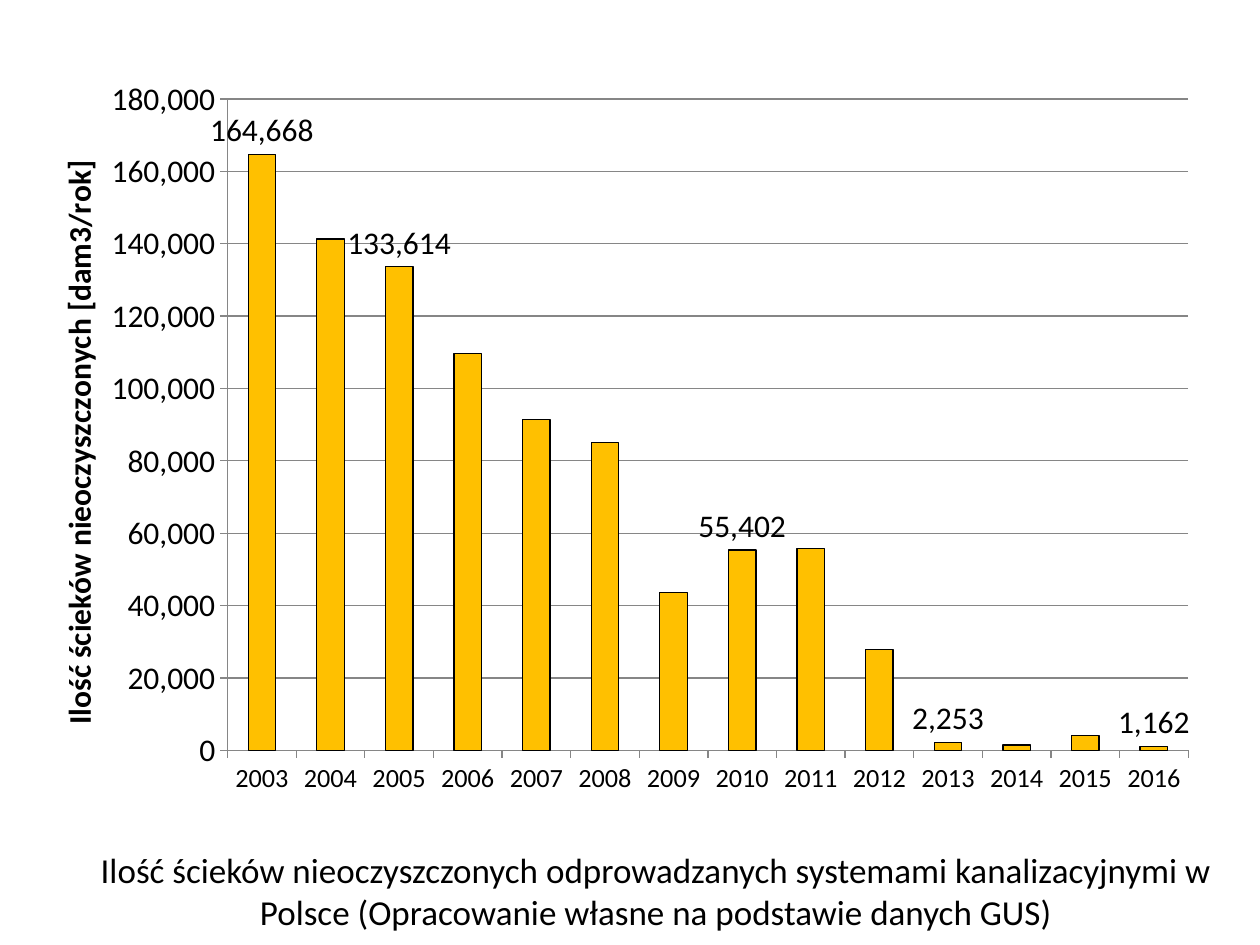
from dataclasses import dataclass

from lxml import etree
from pptx import Presentation
from pptx.chart.data import CategoryChartData
from pptx.dml.color import RGBColor
from pptx.enum.chart import XL_CHART_TYPE, XL_LABEL_POSITION, XL_TICK_MARK
from pptx.enum.text import MSO_ANCHOR, PP_ALIGN
from pptx.oxml.ns import qn
from pptx.util import Pt

COLUMN = XL_CHART_TYPE.COLUMN_CLUSTERED
ABOVE = XL_LABEL_POSITION.OUTSIDE_END
TICK_OUT = XL_TICK_MARK.OUTSIDE
CENTER = PP_ALIGN.CENTER
MIDDLE = MSO_ANCHOR.MIDDLE


@dataclass(frozen=True)
class Theme:
    font: str = "Calibri"
    text: RGBColor = RGBColor(0, 0, 0)
    bar: RGBColor = RGBColor(0xFF, 0xC0, 0x00)
    grid: RGBColor = RGBColor(0x86, 0x86, 0x86)
    caption_size: int = 20
    chart_size: int = 18
    year_size: int = 15


THEME = Theme()
FIRST_YEAR = 2003
VOLUMES = (164668.4, 141326.5, 133614.1, 109675.5, 91408.6, 85008.5, 43644.6,
           55402.3, 55749.3, 27978.8, 2253.3, 1515, 4121.6, 1161.8)
LABELLED_YEARS = (2003, 2005, 2010, 2013, 2016)
AXIS_TITLE = "Ilość ścieków nieoczyszczonych [dam3/rok]"
CAPTION = ("Ilość ścieków nieoczyszczonych odprowadzanych systemami "
           "kanalizacyjnymi w Polsce (Opracowanie własne na podstawie danych GUS)")


def style_font(font, size, bold=False):
    font.name = THEME.font
    font.size = Pt(size)
    font.bold = bold
    font.color.rgb = THEME.text


def style_line(line, color):
    line.color.rgb = color
    line.width = Pt(0.75)


def set_layout(parent, index, **values):
    layout = parent.find(qn("c:layout"))
    if layout is None:
        layout = etree.Element(qn("c:layout"))
        parent.insert(index, layout)
    manual = etree.SubElement(layout, qn("c:manualLayout"))
    for tag, value in values.items():
        etree.SubElement(manual, qn(f"c:{tag}")).set("val", str(value))


def style_axes(chart):
    for axis in (chart.category_axis, chart.value_axis):
        axis.major_tick_mark = TICK_OUT
        axis.minor_tick_mark = XL_TICK_MARK.NONE
        style_line(axis.format.line, THEME.grid)
    style_font(chart.category_axis.tick_labels.font, THEME.year_size)

    axis = chart.value_axis
    axis.minimum_scale, axis.maximum_scale, axis.major_unit = 0, 180000, 20000
    axis.tick_labels.number_format = "#,##0"
    axis.tick_labels.number_format_is_linked = False
    style_font(axis.tick_labels.font, THEME.chart_size)
    axis.has_major_gridlines = True
    style_line(axis.major_gridlines.format.line, THEME.grid)
    r = axis.axis_title.text_frame.paragraphs[0].add_run()
    r.text = AXIS_TITLE
    style_font(r.font, THEME.chart_size, bold=True)
    set_layout(axis.axis_title._element, 1,
               xMode="edge", yMode="edge", x=0.03, y=0.12)


def label_points(series):
    labels = series.data_labels
    labels.show_value = False
    labels.number_format = "#,##0"
    labels.number_format_is_linked = False
    for year in LABELLED_YEARS:
        label = series.points[year - FIRST_YEAR].data_label
        style_font(label.font, THEME.chart_size)
        label.position = ABOVE


def add_column_chart(s, left, top, width, height):
    data = CategoryChartData(number_format="#,##0")
    data.categories = [str(FIRST_YEAR + i) for i in range(len(VOLUMES))]
    data.add_series("Series 1", VOLUMES)
    chart = s.shapes.add_chart(COLUMN, Pt(left), Pt(top), Pt(width),
                               Pt(height), data).chart
    chart.has_legend = False
    chart.has_title = False
    style_font(chart.font, THEME.chart_size)
    plot = chart.plots[0]
    plot.gap_width = 150
    plot.vary_by_categories = False
    series = plot.series[0]
    series.format.fill.solid()
    series.format.fill.fore_color.rgb = THEME.bar
    style_line(series.format.line, THEME.text)
    label_points(series)
    style_axes(chart)
    set_layout(chart._chartSpace.chart.plotArea, 0, layoutTarget="inner",
               xMode="edge", yMode="edge", x=0.177, y=0.045, w=0.80, h=0.875)


def add_caption(s, left, top, width, height):
    tf = s.shapes.add_textbox(Pt(left), Pt(top), Pt(width), Pt(height)).text_frame
    tf.word_wrap = True
    tf.vertical_anchor = MIDDLE
    p = tf.paragraphs[0]
    p.alignment = CENTER
    r = p.add_run()
    r.text = CAPTION
    style_font(r.font, THEME.caption_size)


def main():
    prs = Presentation()
    prs.slide_width, prs.slide_height = Pt(720), Pt(540)
    s = prs.slides.add_slide(prs.slide_layouts[6])
    add_caption(s, 28.8, 480.24, 691.92, 56.88)
    add_column_chart(s, 8.64, 37.44, 686.16, 425.52)
    prs.save("out.pptx")


if __name__ == "__main__":
    main()
